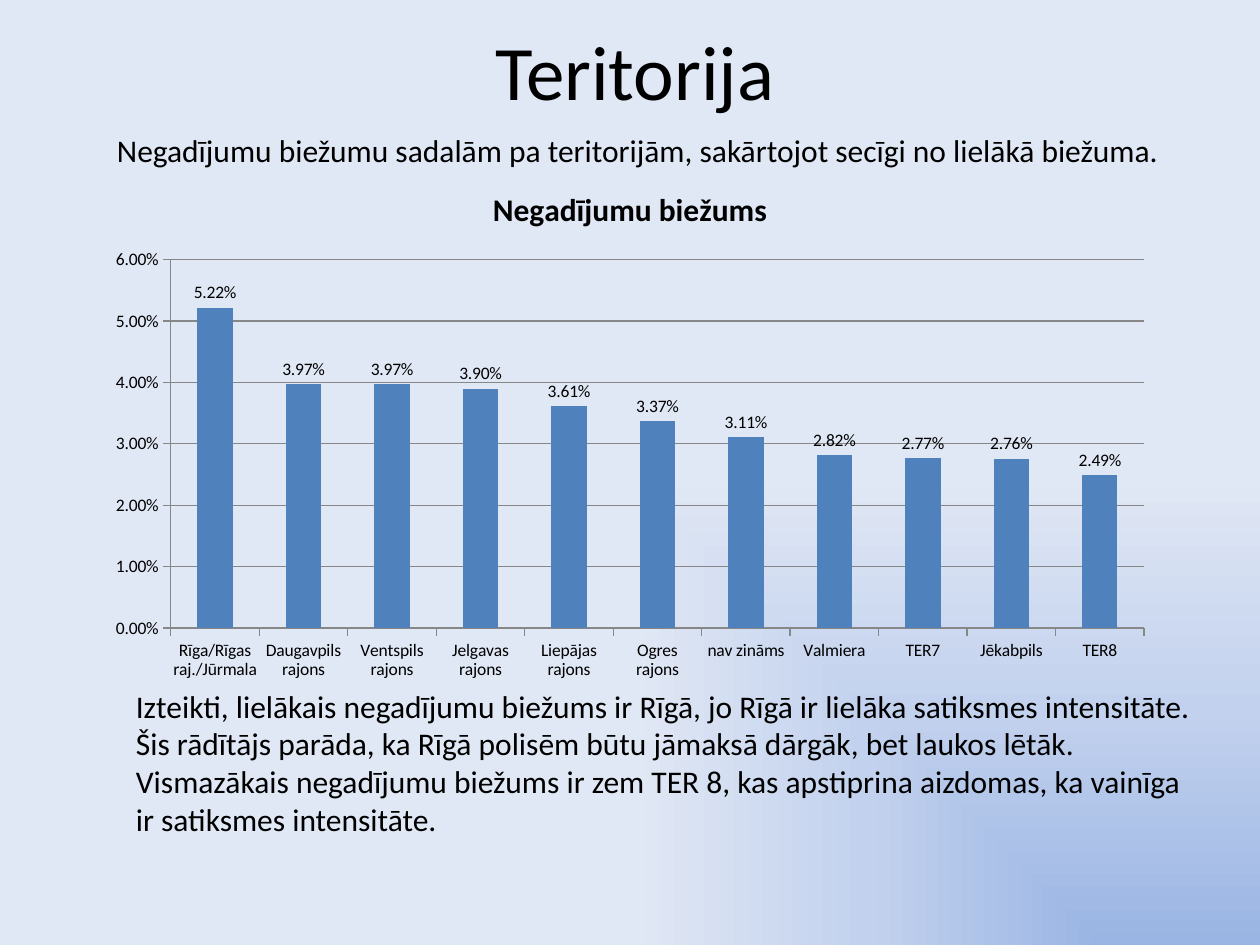
import pptx
import pptx.chart.data
import pptx.dml.color
import pptx.enum.chart
import pptx.enum.text
import pptx.oxml
import pptx.oxml.ns
import pptx.util
from dataclasses import dataclass

Inches = pptx.util.Inches


@dataclass(frozen=True)
class Theme:
    font: str = "Calibri"
    text: str = "000000"
    bar: str = "4F81BD"
    grid: str = "878787"
    gradient: tuple = ((0, "9AB5E4"), (50, "C2D1ED"), (100, "E1E8F5"))
    title_size: int = 44
    body_size: int = 18
    label_size: int = 10


def apply_format(target, values):
    for name, value in values.items():
        setattr(target, name, value)


def color(value):
    return pptx.dml.color.RGBColor.from_string(value)


class SlideBuilder:
    def __init__(self, presentation, theme):
        self.theme = theme
        self.slide = presentation.slides.add_slide(presentation.slide_layouts[5])

    def style_font(self, font, size, **extra):
        apply_format(font, {"name": self.theme.font, "size": pptx.util.Pt(size), **extra})
        font.color.rgb = color(self.theme.text)

    def place(self, shape, box):
        names = ("left", "top", "width", "height")
        apply_format(shape, dict(zip(names, map(Inches, box))))

    def fill_text(self, frame, paragraphs, size, **paragraph_format):
        frame.text = "\n".join(paragraphs)
        for paragraph in frame.paragraphs:
            apply_format(paragraph, paragraph_format)
            for run in paragraph.runs:
                self.style_font(run.font, size)

    def background(self):
        self.slide.background.fill.gradient()
        gradient = self.slide.element.find(".//" + pptx.oxml.ns.qn("a:gradFill"))
        stops = "".join(
            f'<a:gs pos="{position * 1000}"><a:srgbClr val="{value}"/></a:gs>'
            for position, value in self.theme.gradient
        )
        replacement = pptx.oxml.parse_xml(
            f'<a:gradFill {pptx.oxml.ns.nsdecls("a")} rotWithShape="1">'
            f"<a:gsLst>{stops}</a:gsLst>"
            '<a:path path="rect"><a:fillToRect l="100000" t="100000"/></a:path>'
            "</a:gradFill>"
        )
        gradient.getparent().replace(gradient, replacement)

    def title(self, text, box):
        shape = self.slide.shapes.title
        self.place(shape, box)
        shape.text_frame.vertical_anchor = pptx.enum.text.MSO_ANCHOR.MIDDLE
        self.fill_text(shape.text_frame, [text], self.theme.title_size,
                       alignment=pptx.enum.text.PP_ALIGN.CENTER)

    def text(self, paragraphs, box):
        frame = self.slide.shapes.add_textbox(*map(Inches, box)).text_frame
        apply_format(frame, {
            "word_wrap": True,
            "auto_size": pptx.enum.text.MSO_AUTO_SIZE.SHAPE_TO_FIT_TEXT,
        })
        self.fill_text(frame, paragraphs, self.theme.body_size)

    def column_chart(self, name, values, box):
        data = pptx.chart.data.CategoryChartData(number_format="0.00%")
        data.categories = values.keys()
        data.add_series(name, values.values())
        chart = self.slide.shapes.add_chart(
            pptx.enum.chart.XL_CHART_TYPE.COLUMN_CLUSTERED, *map(Inches, box), data
        ).chart
        self.style_font(chart.font, self.theme.label_size)
        apply_format(chart, {"has_legend": False, "has_title": True})
        chart.chart_title.include_in_layout = False
        title_frame = chart.chart_title.text_frame
        title_frame.text = name
        self.style_font(title_frame.paragraphs[0].runs[0].font,
                        self.theme.body_size, bold=True)

        plot = chart.plots[0]
        apply_format(plot, {"gap_width": 150, "vary_by_categories": False,
                            "has_data_labels": True})
        apply_format(plot.data_labels, {
            "show_value": True,
            "number_format": "0.00%",
            "number_format_is_linked": False,
            "position": pptx.enum.chart.XL_LABEL_POSITION.OUTSIDE_END,
        })
        self.style_font(plot.data_labels.font, self.theme.label_size)
        fill = plot.series[0].format.fill
        fill.solid()
        fill.fore_color.rgb = color(self.theme.bar)

        value_axis = chart.value_axis
        apply_format(value_axis, {"minimum_scale": 0, "maximum_scale": 0.06,
                                  "major_unit": 0.01, "has_major_gridlines": True})
        apply_format(value_axis.tick_labels, {"number_format": "0.00%",
                                              "number_format_is_linked": False})
        for axis in (chart.category_axis, value_axis):
            axis.major_tick_mark = pptx.enum.chart.XL_TICK_MARK.OUTSIDE
            self.style_font(axis.tick_labels.font, self.theme.label_size)
        for line in (chart.category_axis.format.line, value_axis.format.line,
                     value_axis.major_gridlines.format.line):
            line.color.rgb = color(self.theme.grid)
            line.width = pptx.util.Pt(0.75)


def main():
    presentation = pptx.Presentation()
    apply_format(presentation, {"slide_width": Inches(10), "slide_height": Inches(7.5)})
    builder = SlideBuilder(presentation, Theme())
    builder.background()
    builder.title("Teritorija", (0.75, 0, 8.58, 1.11))
    builder.text(
        ["Negadījumu biežumu sadalām pa teritorijām, sakārtojot secīgi no lielākā biežuma."],
        (0.83, 0.99, 8.58, 0.4),
    )
    builder.text(
        [
            "Izteikti, lielākais negadījumu biežums ir Rīgā, jo Rīgā ir lielāka "
            "satiksmes intensitāte.",
            "Šis rādītājs parāda, ka Rīgā polisēm būtu jāmaksā dārgāk, bet laukos lētāk. "
            "Vismazākais negadījumu biežums ir zem TER 8, kas apstiprina aizdomas, "
            "ka vainīga ir satiksmes intensitāte.",
        ],
        (0.98, 5.4, 8.58, 1.31),
    )
    frequencies = {
        "Rīga/Rīgas raj./Jūrmala": 0.0522,
        "Daugavpils rajons": 0.0397,
        "Ventspils rajons": 0.0397,
        "Jelgavas rajons": 0.0390,
        "Liepājas rajons": 0.0361,
        "Ogres rajons": 0.0337,
        "nav zināms": 0.0311,
        "Valmiera": 0.0282,
        "TER7": 0.0277,
        "Jēkabpils": 0.0276,
        "TER8": 0.0249,
    }
    builder.column_chart("Negadījumu biežums", frequencies, (0.75, 1.31, 8.5, 4.17))
    presentation.save("out.pptx")


if __name__ == "__main__":
    main()
